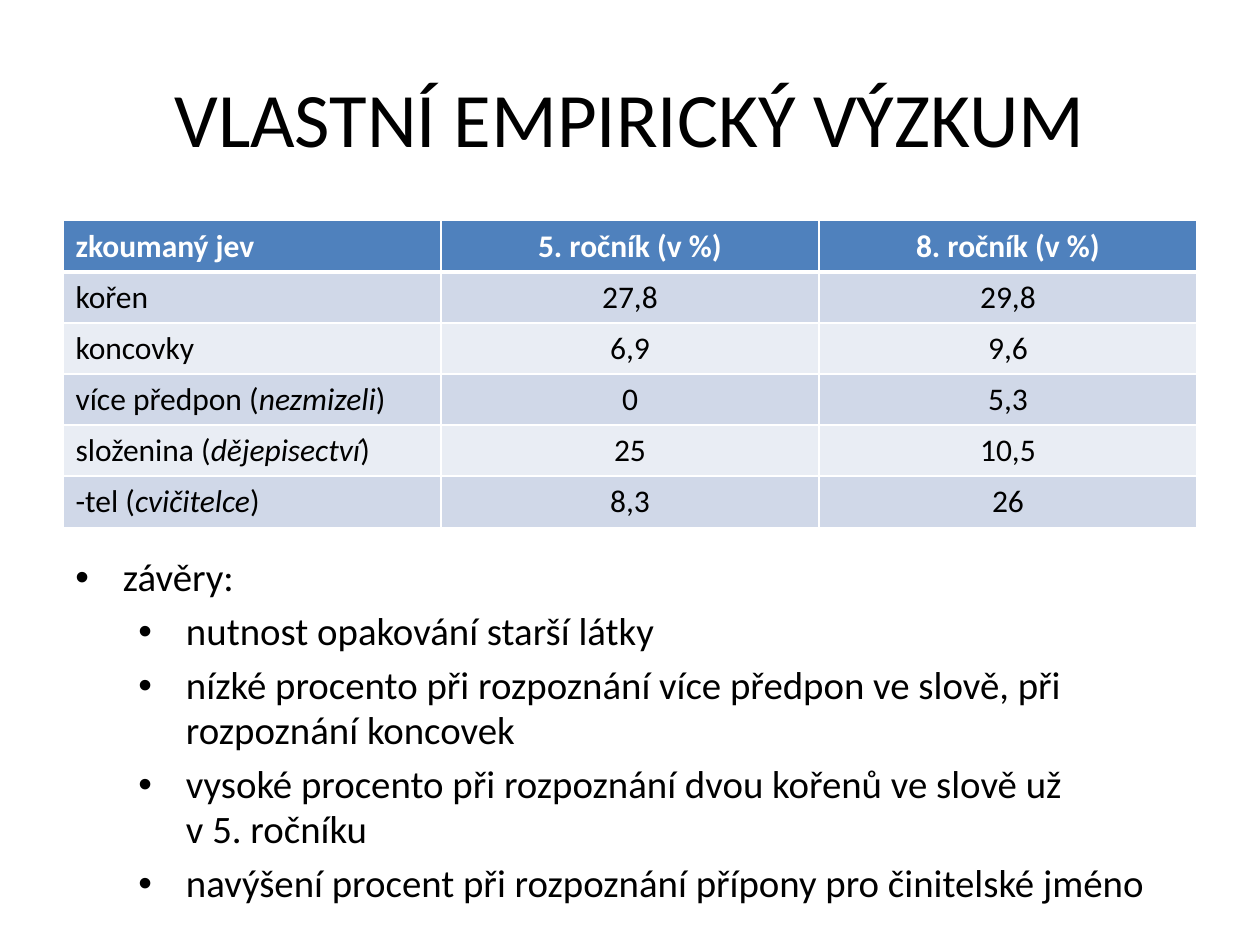
from pptx import Presentation
from pptx.dml.color import RGBColor
from pptx.enum.text import MSO_ANCHOR, PP_ALIGN
from pptx.oxml import parse_xml
from pptx.oxml.ns import nsdecls
from pptx.util import Cm, Pt

THEME = {
    "font": "Calibri",
    "text": "000000",
    "white": "FFFFFF",
    "header": "4F81BD",
    "bands": ("D0D8E8", "E9EDF4"),
    "title_size": 44,
    "table_size": 18,
    "bullet_size": 22.2,
}
LEFT, WIDTH = Cm(1.27), Cm(22.86)


def write(paragraph, text, size, color=THEME["text"], bold=False,
          align=PP_ALIGN.LEFT):
    """Fill a paragraph; text between asterisks is italic, \\n breaks the line."""
    paragraph.alignment = align
    for part, words in enumerate(text.split("*")):
        for number, line in enumerate(words.split("\n")):
            if number:
                paragraph.add_line_break()
            run = paragraph.add_run()
            run.text = line
            run.font.name = THEME["font"]
            run.font.size = Pt(size)
            run.font.bold = bold
            run.font.italic = part % 2 == 1
            run.font.color.rgb = RGBColor.from_string(color)


def add_border(cell, side, points):
    cell._tc.get_or_add_tcPr().append(parse_xml(
        f'<a:{side} {nsdecls("a")} w="{Pt(points)}"><a:solidFill>'
        f'<a:srgbClr val="{THEME["white"]}"/></a:solidFill></a:{side}>'))


prs = Presentation()
prs.slide_width, prs.slide_height = Cm(25.4), Cm(19.05)
slide = prs.slides.add_slide(prs.slide_layouts[5])

# Title
title = slide.shapes.title
title.left, title.top, title.width, title.height = LEFT, Cm(0.76), WIDTH, Cm(3.18)
title.text_frame.vertical_anchor = MSO_ANCHOR.MIDDLE
write(title.text_frame.paragraphs[0], "VLASTNÍ EMPIRICKÝ VÝZKUM",
      THEME["title_size"], align=PP_ALIGN.CENTER)

# Results table
results = [
    ("zkoumaný jev", "5. ročník (v %)", "8. ročník (v %)"),
    ("kořen", "27,8", "29,8"),
    ("koncovky", "6,9", "9,6"),
    ("více předpon (*nezmizeli*)", "0", "5,3"),
    ("složenina (*dějepisectví*)", "25", "10,5"),
    ("-tel (*cvičitelce*)", "8,3", "26"),
]
table = slide.shapes.add_table(len(results), 3, LEFT, Cm(4.45), WIDTH,
                               Cm(1.03) * len(results)).table
for row, values in enumerate(results):
    is_header = row == 0
    fill = THEME["header"] if is_header else THEME["bands"][(row - 1) % 2]
    for column, value in enumerate(values):
        cell = table.cell(row, column)
        for side in ("lnL", "lnR", "lnT", "lnB"):
            thick = (is_header and side == "lnB") or (row == 1 and side == "lnT")
            add_border(cell, side, 3 if thick else 1)
        cell.fill.solid()
        cell.fill.fore_color.rgb = RGBColor.from_string(fill)
        write(cell.text_frame.paragraphs[0], value, THEME["table_size"],
              color=THEME["white"] if is_header else THEME["text"],
              bold=is_header,
              align=PP_ALIGN.CENTER if column else PP_ALIGN.LEFT)

# Conclusions
conclusions = [
    (0, "závěry:"),
    (1, "nutnost opakování starší látky"),
    (1, "nízké procento při rozpoznání více předpon ve slově, "
        "při rozpoznání koncovek"),
    (1, "vysoké procento při rozpoznání dvou kořenů ve slově už\nv 5. ročníku"),
    (1, "navýšení procent při rozpoznání přípony pro činitelské jméno"),
]
frame = slide.shapes.add_textbox(LEFT, Cm(11.13), WIDTH, Cm(7.39)).text_frame
frame.word_wrap = True
for number, (level, text) in enumerate(conclusions):
    paragraph = frame.paragraphs[0] if number == 0 else frame.add_paragraph()
    properties = paragraph._p.get_or_add_pPr()
    properties.set("marL", str(Cm(0.96) + level * Cm(1.27)))
    properties.set("indent", str(-Cm(0.96)))
    properties.append(parse_xml(f'<a:buFont {nsdecls("a")} typeface="Arial"/>'))
    properties.append(parse_xml(f'<a:buChar {nsdecls("a")} char="•"/>'))
    paragraph.level = level
    paragraph.line_spacing = 0.97 if number else 0.9
    if number:
        paragraph.space_before = Pt(5)
    write(paragraph, text, THEME["bullet_size"])

prs.save("out.pptx")
